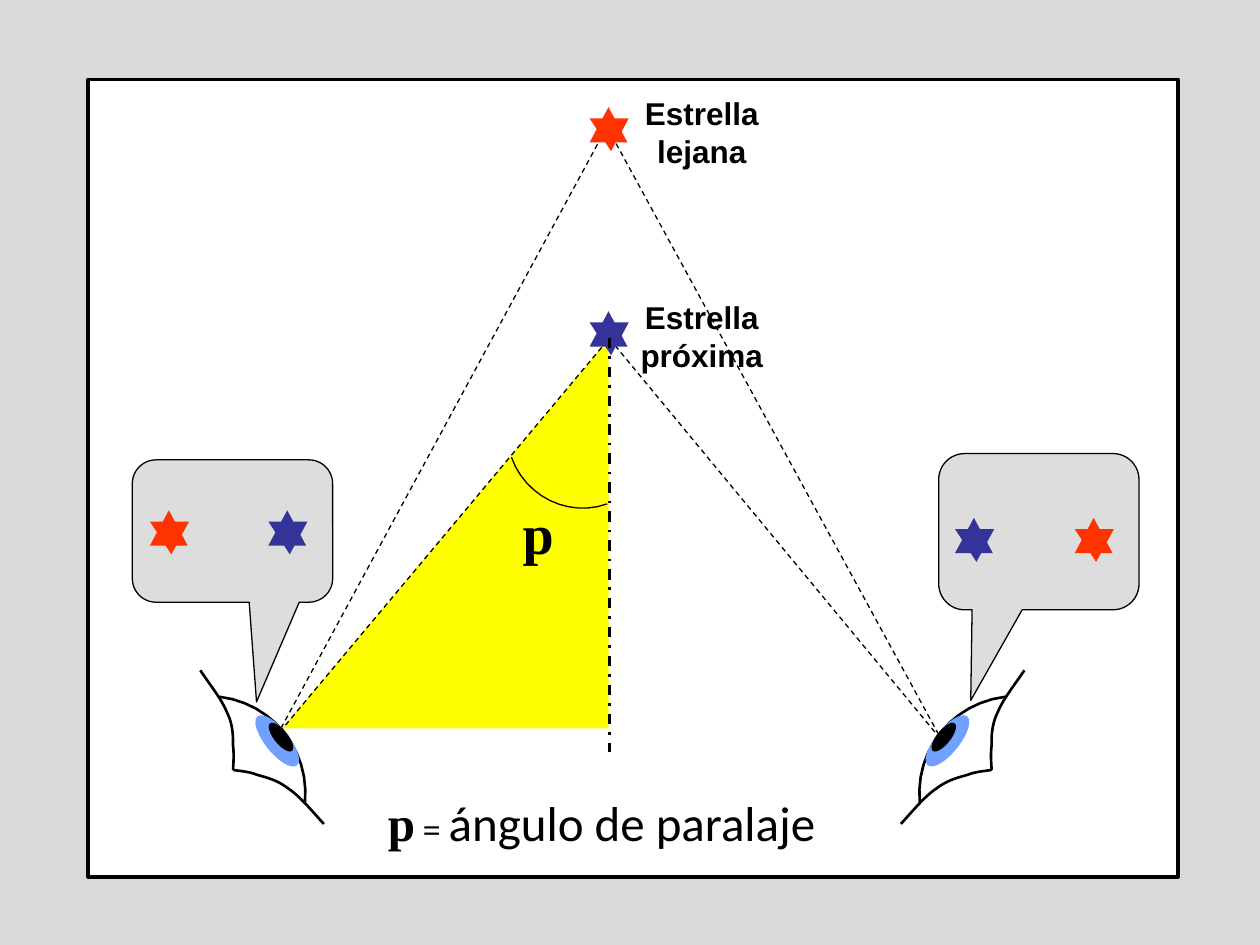
from lxml import etree
from pptx import Presentation
from pptx import util as u
from pptx.dml.color import RGBColor
from pptx.enum import dml, shapes, text
from pptx.oxml.ns import qn

BLACK, WHITE, GREY = "000000", "FFFFFF", "DDDDDD"
FAR, NEAR = "FF3300", "333399"
SERIF = "Times New Roman"
COLUMNS, ROWS = 10, 7.5
EYE_AXIS = 9.72  # sum of the x values of two mirrored eye points


def color(hex_value):
    return RGBColor.from_string(hex_value)


def bezier(points, steps=12):
    """Points along a chain of cubic curves: start, then three per curve."""
    curve = [points[0]]
    for first in range(0, len(points) - 1, 3):
        p0, p1, p2, p3 = points[first:first + 4]
        for step in range(1, steps + 1):
            t = step / steps
            weights = ((1 - t) ** 3, 3 * t * (1 - t) ** 2, 3 * t * t * (1 - t), t ** 3)
            curve.append(tuple(
                sum(w * p[axis] for w, p in zip(weights, (p0, p1, p2, p3)))
                for axis in (0, 1)))
    return curve


class Diagram:
    """Holds the slide, its grid and the common style."""

    def __init__(self, prs):
        self.slide = prs.slides.add_slide(prs.slide_layouts[6])
        self.column = prs.slide_width / COLUMNS
        self.row = prs.slide_height / ROWS

    def at(self, x, y):
        return u.Emu(round(x * self.column)), u.Emu(round(y * self.row))

    def background(self, fill):
        self.slide.background.fill.solid()
        self.slide.background.fill.fore_color.rgb = color(fill)

    def paint(self, shape, fill=None, width=None):
        shape.shadow.inherit = False
        if fill:
            shape.fill.solid()
            shape.fill.fore_color.rgb = color(fill)
        else:
            shape.fill.background()
        if width:
            shape.line.color.rgb = color(BLACK)
            shape.line.width = u.Pt(width)
        else:
            shape.line.fill.background()
        return shape

    def preset(self, kind, x, y, w, h, fill, width=None):
        shape = self.slide.shapes.add_shape(kind, *self.at(x, y), *self.at(w, h))
        return self.paint(shape, fill, width)

    def outline(self, points, fill=None, width=None):
        start, *rest = [self.at(*point) for point in points]
        builder = self.slide.shapes.build_freeform(*start)
        builder.add_line_segments(rest, close=fill is not None)
        return self.paint(builder.convert_to_shape(), fill, width)

    def sight_line(self, start, end, width=0.75, dash=dml.MSO_LINE.DASH):
        line = self.slide.shapes.add_connector(
            shapes.MSO_CONNECTOR.STRAIGHT, *self.at(*start), *self.at(*end))
        line.line.color.rgb = color(BLACK)
        line.line.width = u.Pt(width)
        line.line.dash_style = dash
        etree.SubElement(line._element.spPr, qn("a:effectLst"))

    def star(self, x, y, fill):
        """Two triangles, with the top point at x, y."""
        for triangle in (((0, 0), (-0.15, 0.28), (0.15, 0.28)),
                         ((-0.15, 0.09), (0.02, 0.35), (0.16, 0.09))):
            self.outline([(x + dx, y + dy) for dx, dy in triangle], fill)

    def callout(self, x, y, w, h, tip):
        bubble = self.preset(shapes.MSO_SHAPE.ROUNDED_RECTANGULAR_CALLOUT,
                             x, y, w, h, GREY, 0.75)
        bubble.adjustments[0], bubble.adjustments[1] = tip

    def eye(self, mirrored=False):
        def place(x):
            return EYE_AXIS - x if mirrored else x

        def curve(points):
            self.outline(bezier([(place(x), y) for x, y in points]), width=1.5)

        def oval(x, y, w, h, fill):
            shape = self.preset(shapes.MSO_SHAPE.OVAL,
                                place(x) - w / 2, y - h / 2, w, h, fill)
            shape.rotation = 218.8 if mirrored else 141.2

        curve(LOWER_LID)
        curve(CORNEA)
        oval(2.2, 5.88, 0.19, 0.5, "71A0FF")
        oval(2.23, 5.85, 0.11, 0.28, BLACK)
        curve(UPPER_LID)

    def label(self, x, y, w, h, runs, align=text.PP_ALIGN.LEFT):
        """Runs are (words, size, font, bold)."""
        box = self.slide.shapes.add_textbox(*self.at(x, y), *self.at(w, h))
        frame = box.text_frame
        frame.word_wrap = True
        frame.auto_size = text.MSO_AUTO_SIZE.SHAPE_TO_FIT_TEXT
        paragraph = frame.paragraphs[0]
        paragraph.alignment = align
        paragraph.font.color.rgb = color(BLACK)
        for words, size, font, bold in runs:
            run = paragraph.add_run()
            run.text = words
            style = paragraph.font if len(runs) == 1 else run.font
            style.size, style.name, style.bold = u.Pt(size), font, bold


# Curves of the left eye
LOWER_LID = [(2.57, 6.54), (2.47, 6.43), (2.38, 6.32), (2.29, 6.26), (2.2, 6.19),
             (2.11, 6.17), (2.04, 6.15), (1.97, 6.12), (1.88, 6.12), (1.85, 6.11)]
CORNEA = [(2.42, 6.37), (2.46, 5.95), (2.16, 5.58), (1.74, 5.53)]
UPPER_LID = [(1.59, 5.32), (1.67, 5.44), (1.76, 5.55), (1.8, 5.65), (1.85, 5.75),
             (1.85, 5.84), (1.85, 5.92), (1.86, 6), (1.85, 6.08), (1.85, 6.11)]
ANGLE_ARC = [(4.82, 4), (4.51, 4.11), (4.17, 3.94), (4.06, 3.63)]


def main():
    prs = Presentation()
    prs.slide_width, prs.slide_height = u.Inches(10), u.Inches(7.5)
    diagram = Diagram(prs)

    # Panel and parallax triangle
    diagram.background("D9D9D9")
    diagram.preset(shapes.MSO_SHAPE.RECTANGLE, 0.7, 0.63, 8.65, 6.33, WHITE, 2)
    diagram.outline([(4.83, 2.69), (2.24, 5.78), (4.83, 5.78)], "FFFF00")

    # Lines of sight
    diagram.sight_line((7.45, 5.83), (4.83, 1.03))
    diagram.sight_line((2.23, 5.78), (4.81, 1.02))
    diagram.sight_line((2.22, 5.81), (4.84, 2.68))
    diagram.sight_line((7.42, 5.81), (4.83, 2.68))

    # Eyes and what each one sees
    diagram.eye(mirrored=True)
    diagram.callout(1.05, 3.65, 1.59, 1.13, (0.12, 1.2))
    diagram.star(1.34, 4.05, FAR)
    diagram.star(2.28, 4.05, NEAR)
    diagram.callout(7.45, 3.6, 1.59, 1.24, (-0.34, 1.08))
    diagram.star(7.73, 4.11, NEAR)
    diagram.star(8.68, 4.11, FAR)
    diagram.eye()

    # Near and far stars
    for name, top, fill in (("Estrella próxima", 2.32, NEAR),
                            ("Estrella lejana", 0.7, FAR)):
        diagram.star(4.83, top + 0.15, fill)
        diagram.label(4.65, top, 1.84, 0.7, [(name, 18, "Arial", True)],
                      text.PP_ALIGN.CENTER)

    # Axis, angle and its meaning
    diagram.sight_line((4.84, 2.68), (4.84, 5.97), 1.5, dml.MSO_LINE.DASH_DOT)
    diagram.outline(bezier(ANGLE_ARC), width=0.75)
    diagram.label(4.05, 3.91, 0.59, 0.63, [("p", 32, SERIF, True)])
    diagram.label(2.98, 6.24, 4.54, 0.57, [
        ("p", 28, SERIF, True),
        (" = ", 18, SERIF, True),
        ("ángulo de paralaje", 28, "Calibri", False)])

    prs.save("out.pptx")


if __name__ == "__main__":
    main()
